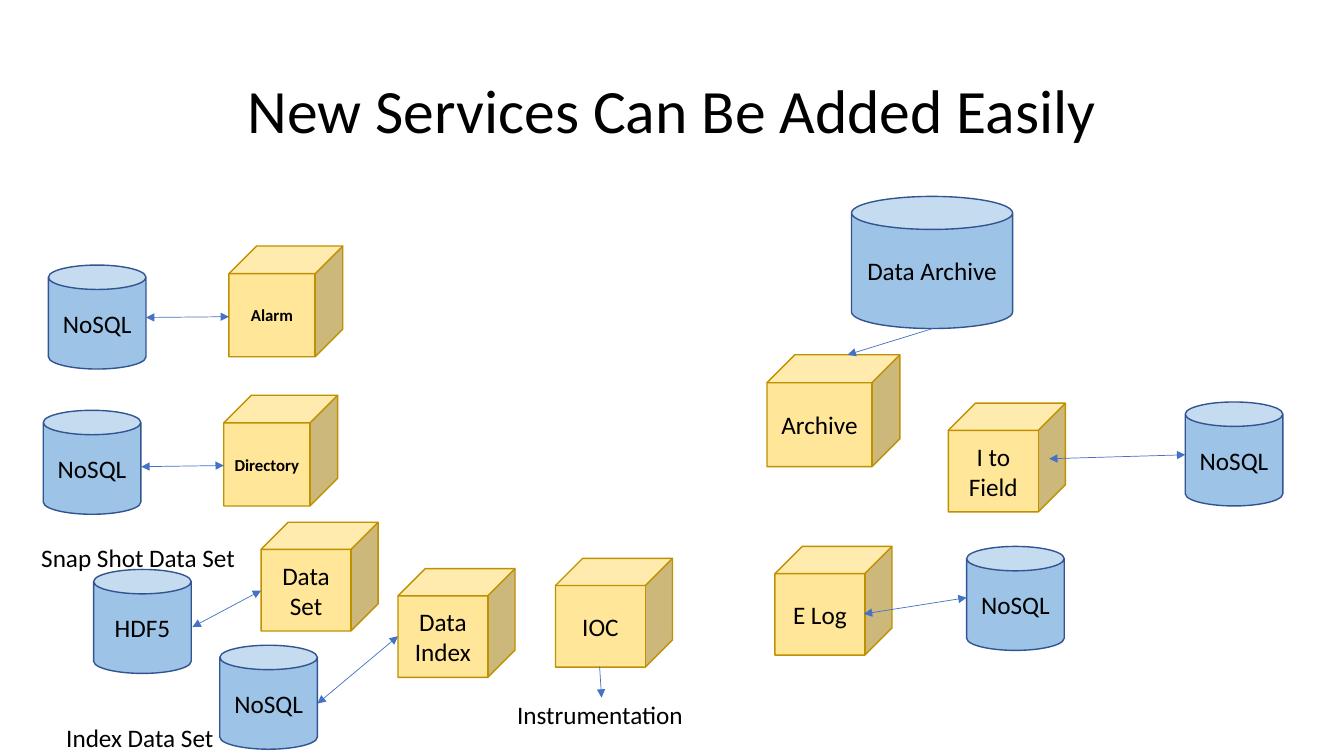
import pptx
import pptx.dml.color
import pptx.enum.shapes
import pptx.enum.text
import pptx.oxml.ns
import pptx.util
from lxml import etree

Cm = pptx.util.Cm
Shape = pptx.enum.shapes.MSO_SHAPE
Align = pptx.enum.text.PP_ALIGN
Anchor = pptx.enum.text.MSO_ANCHOR
qn = pptx.oxml.ns.qn


def color(hex_text):
    return pptx.dml.color.RGBColor.from_string(hex_text)


def write(frame, text, size=18, bold=False, align=Align.CENTER, spacing=None):
    para = frame.paragraphs[0]
    para.alignment = align
    if spacing:
        para.line_spacing = spacing
    span = para.add_run()
    span.text = text
    span.font.name = "Calibri"
    span.font.size = pptx.util.Pt(size)
    span.font.bold = bold
    span.font.color.rgb = color("000000")


class Diagram:
    """Draws services, stores and their links on one slide."""

    service_fill, service_line = "FFE699", "BF9000"
    store_fill, store_line = "9DC3E6", "325491"
    link_line = "4472C4"

    def __init__(self, page):
        self.page = page

    def title(self, text):
        box = self.page.shapes.title
        box.left, box.top, box.width, box.height = Cm(2.34), Cm(1.02), Cm(29.21), Cm(3.68)
        box.text_frame.vertical_anchor = Anchor.MIDDLE
        write(box.text_frame, text, size=44, spacing=0.9)

    def solid(self, kind, text, left, top, width, height, fill, line, **style):
        shape = self.page.shapes.add_shape(kind, Cm(left), Cm(top), Cm(width), Cm(height))
        shape.shadow.inherit = False
        shape.fill.solid()
        shape.fill.fore_color.rgb = color(fill)
        shape.line.color.rgb = color(line)
        shape.line.width = pptx.util.Pt(1)
        shape.text_frame.word_wrap = True
        shape.text_frame.vertical_anchor = Anchor.MIDDLE
        write(shape.text_frame, text, **style)

    def service(self, text, left, top, width=2.95, height=2.74, **style):
        self.solid(Shape.CUBE, text, left, top, width, height,
                   self.service_fill, self.service_line, **style)

    def store(self, text, left, top, width=2.46, height=2.62):
        self.solid(Shape.CAN, text, left, top, width, height,
                   self.store_fill, self.store_line)

    def label(self, text, left, top, width):
        box = self.page.shapes.add_textbox(Cm(left), Cm(top), Cm(width), Cm(1.02))
        box.text_frame.word_wrap = False
        box.text_frame.auto_size = pptx.enum.text.MSO_AUTO_SIZE.SHAPE_TO_FIT_TEXT
        write(box.text_frame, text, align=Align.LEFT)

    def link(self, start, end, both_ways=True):
        link = self.page.shapes.add_connector(
            pptx.enum.shapes.MSO_CONNECTOR.STRAIGHT, *map(Cm, start + end))
        link.line.color.rgb = color(self.link_line)
        link.line.width = pptx.util.Pt(0.5)
        properties = link.line._get_or_add_ln()
        for tag in ("a:headEnd", "a:tailEnd") if both_ways else ("a:tailEnd",):
            etree.SubElement(properties, qn(tag), type="triangle")
        etree.SubElement(link._element.spPr, qn("a:effectLst"))


def main():
    deck = pptx.Presentation()
    deck.slide_width, deck.slide_height = Cm(33.87), Cm(19.05)
    diagram = Diagram(deck.slides.add_slide(deck.slide_layouts[5]))
    diagram.title("New Services Can Be Added Easily")

    # Labels lie behind the stores
    for text, left, top, width in (
        ("Snap Shot Data Set", 0.79, 13.54, 5.46),
        ("Index Data Set", 1.42, 18.08, 4.27),
        ("Instrumentation", 12.78, 17.5, 4.75),
    ):
        diagram.label(text, left, top, width)

    # Services
    for text, left, top in (("Alarm", 5.77, 6.2), ("Directory", 5.64, 9.96)):
        diagram.service(text, left, top, 2.87, 2.79, size=12, bold=True)
    for text, left, top in (
        ("Data Set", 6.58, 13.16),
        ("Data Index", 10.03, 14.33),
        ("IOC", 14, 14.07),
        ("I to Field", 23.9, 10.16),
        ("E Log", 19.53, 13.77),
    ):
        diagram.service(text, left, top)
    diagram.service("Archive", 19.33, 8.94, 3.35, 2.82)

    # Stores
    for text, left, top in (
        ("NoSQL", 1.22, 6.68),
        ("NoSQL", 1.09, 10.34),
        ("HDF5", 2.36, 14.35),
        ("NoSQL", 5.54, 16.26),
        ("NoSQL", 29.87, 10.13),
        ("NoSQL", 24.36, 13.77),
    ):
        diagram.store(text, left, top)
    diagram.store("Data Archive", 21.46, 4.95, 4.06, 3.33)

    # Links between services and stores
    for start, end in (
        ((3.68, 8), (5.77, 7.98)),
        ((3.56, 11.76), (5.64, 11.73)),
        ((4.85, 15.8), (6.58, 14.88)),
        ((8, 17.73), (10.03, 16.03)),
        ((26.44, 11.56), (29.87, 11.46)),
        ((21.77, 15.47), (24.36, 15.06)),
    ):
        diagram.link(start, end)
    diagram.link((23.5, 8.28), (21.36, 8.94), both_ways=False)
    diagram.link((15.11, 16.79), (15.16, 17.58), both_ways=False)

    deck.save("out.pptx")


if __name__ == "__main__":
    main()
